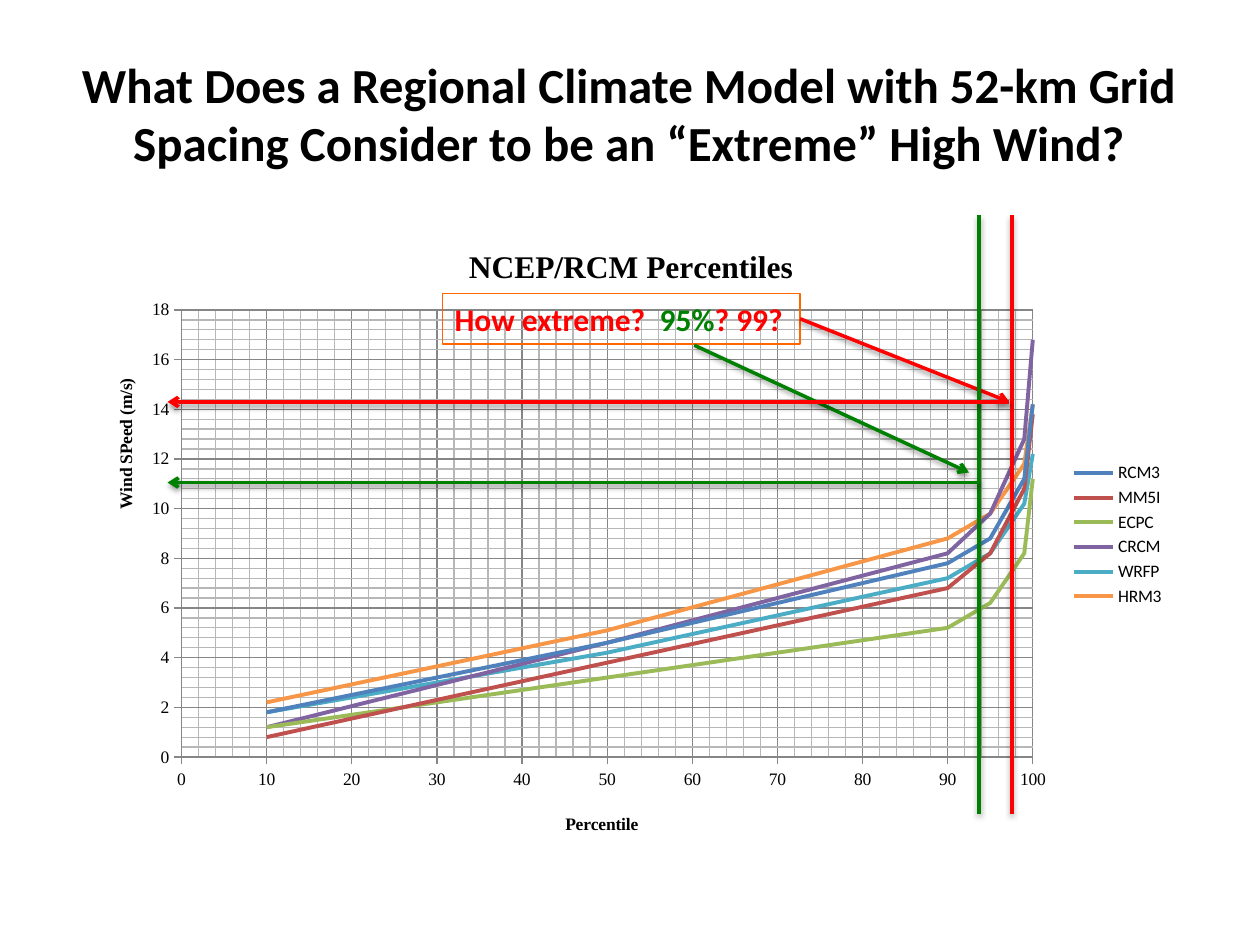
from typing import NamedTuple

from lxml import etree
from pptx import Presentation
from pptx.chart.data import XyChartData
from pptx.dml.color import RGBColor
from pptx.enum.chart import XL_CHART_TYPE, XL_LEGEND_POSITION, XL_TICK_MARK
from pptx.enum.shapes import MSO_CONNECTOR, MSO_SHAPE
from pptx.enum.text import MSO_ANCHOR, MSO_AUTO_SIZE, PP_ALIGN
from pptx.oxml import parse_xml
from pptx.oxml.ns import nsdecls, qn
from pptx.util import Inches, Pt

COLORS = {
    "black": "000000", "red": "FF0000", "green": "008000", "orange": "FF6600",
    "major": "868686", "minor": "B7B7B7",
}
SERIF, SANS = "Times New Roman", "Calibri"
PERCENTILES = (10, 50, 90, 95, 99, 100)


class Model(NamedTuple):
    name: str
    color: str
    speeds: tuple[float, ...]


class Marker(NamedTuple):
    start: tuple[float, float]
    end: tuple[float, float]
    color: str
    arrow: bool = True


class Scale(NamedTuple):
    title: str
    title_place: tuple[float, float]
    maximum: int
    major: int
    minor: float


MODELS = (
    Model("RCM3", "4F81BD", (1.8, 4.6, 7.8, 8.8, 11.2, 14.2)),
    Model("MM5I", "C0504D", (0.8, 3.8, 6.8, 8.2, 10.8, 13.8)),
    Model("ECPC", "9BBB59", (1.2, 3.2, 5.2, 6.2, 8.2, 11.2)),
    Model("CRCM", "8064A2", (1.2, 4.6, 8.2, 9.8, 12.8, 16.8)),
    Model("WRFP", "4BACC6", (1.8, 4.2, 7.2, 8.2, 10.2, 12.2)),
    Model("HRM3", "F79646", (2.2, 5.1, 8.8, 9.8, 11.8, 14.2)),
)
PERCENTILE_SCALE = Scale("Percentile", (0.44, 0.93), 100, 10, 2)
SPEED_SCALE = Scale("Wind SPeed (m/s)", (0.03, 0.25), 18, 2, 0.4)

RED_X, GREEN_X, AXIS_X = 8.03, 7.77, 1.33
TOP, BOTTOM = 1.71, 6.46
RED_SPEED_Y, GREEN_SPEED_Y = 3.19, 3.83
MARKERS = (
    Marker((6.35, 2.53), (8.01, RED_SPEED_Y), "red"),
    Marker((5.51, 2.74), (7.69, 3.75), "green"),
    Marker((RED_X, TOP), (RED_X, BOTTOM), "red", arrow=False),
    Marker((GREEN_X, TOP), (GREEN_X, BOTTOM), "green", arrow=False),
    Marker((GREEN_X, GREEN_SPEED_Y), (AXIS_X, GREEN_SPEED_Y), "green"),
    Marker((8.01, RED_SPEED_Y), (AXIS_X, RED_SPEED_Y), "red"),
)


def rgb(name: str) -> RGBColor:
    return RGBColor.from_string(COLORS.get(name, name))


def style_font(font, size: float, face: str, color: str = "black", bold: bool = False) -> None:
    for attribute, value in {"size": Pt(size), "name": face, "bold": bold}.items():
        setattr(font, attribute, value)
    font.color.rgb = rgb(color)


def style_line(line, color: str, width: float) -> None:
    line.color.rgb = rgb(color)
    line.width = Pt(width)


def place_part(part, after: str | None, **fractions: float) -> None:
    """Fix a chart part at fractions of the chart, its layout following the child named after."""
    for old in part.findall(qn("c:layout")):
        part.remove(old)
    layout = parse_xml(f'<c:layout {nsdecls("c")}><c:manualLayout/></c:layout>')
    settings = {"xMode": "edge", "yMode": "edge", **fractions}
    if after is None:
        settings = {"layoutTarget": "inner", **settings}
        part.insert(0, layout)
    else:
        part.find(qn(after)).addnext(layout)
    for tag, value in settings.items():
        etree.SubElement(layout[0], qn(f"c:{tag}")).set("val", str(value))


def write_title(title, text: str, size: float, place: tuple[float, float]) -> None:
    title.text_frame.text = text
    style_font(title.text_frame.paragraphs[0].runs[0].font, size, SERIF, bold=True)
    place_part(title._element, "c:tx", x=place[0], y=place[1])


def style_minor_gridlines(axis) -> None:
    axis._element.find(qn("c:minorGridlines")).append(parse_xml(
        f'<c:spPr {nsdecls("c", "a")}><a:ln w="{Pt(0.75)}"><a:solidFill>'
        f'<a:srgbClr val="{COLORS["minor"]}"/></a:solidFill></a:ln></c:spPr>'))


def format_axis(axis, scale: Scale) -> None:
    settings = {
        "minimum_scale": 0, "maximum_scale": scale.maximum,
        "major_unit": scale.major, "minor_unit": scale.minor,
        "has_major_gridlines": True, "has_minor_gridlines": True, "has_title": True,
        "major_tick_mark": XL_TICK_MARK.CROSS, "minor_tick_mark": XL_TICK_MARK.NONE,
    }
    for attribute, value in settings.items():
        setattr(axis, attribute, value)
    style_line(axis.major_gridlines.format.line, "major", 0.75)
    style_minor_gridlines(axis)
    style_line(axis.format.line, "major", 0.75)
    style_font(axis.tick_labels.font, 10, SERIF)
    axis.tick_labels.number_format = "General"
    axis.tick_labels.number_format_is_linked = False
    write_title(axis.axis_title, scale.title, 10, scale.title_place)


def add_wind_chart(slide) -> None:
    data = XyChartData()
    for model in MODELS:
        points = data.add_series(model.name)
        for percentile, speed in zip(PERCENTILES, model.speeds):
            points.add_data_point(percentile, speed)
    chart = slide.shapes.add_chart(
        XL_CHART_TYPE.XY_SCATTER_LINES_NO_MARKERS,
        Inches(0.62), Inches(1.71), Inches(8.73), Inches(5.07), data,
    ).chart
    style_font(chart.font, 10, SANS)
    chart.has_title = True
    write_title(chart.chart_title, "NCEP/RCM Percentiles", 18, (0.35, 0.04))
    format_axis(chart.category_axis, PERCENTILE_SCALE)
    format_axis(chart.value_axis, SPEED_SCALE)
    chart.has_legend = True
    chart.legend.position = XL_LEGEND_POSITION.RIGHT
    chart.legend.include_in_layout = False
    style_font(chart.legend.font, 10, SANS)
    place_part(chart.legend._element, "c:legendPos", x=0.9, y=0.38, w=0.09, h=0.24)

    plot = chart.plots[0]
    plot.vary_by_categories = False
    for series, model in zip(plot.series, MODELS):
        series.smooth = False
        style_line(series.format.line, model.color, 2.25)
    place_part(plot._element.getparent(), None, x=0.094, y=0.148, w=0.774, h=0.7)


def add_marker(slide, marker: Marker) -> None:
    connector = slide.shapes.add_connector(
        MSO_CONNECTOR.STRAIGHT, *(Inches(v) for v in marker.start + marker.end))
    style_line(connector.line, marker.color, 2)
    if marker.arrow:
        etree.SubElement(connector.line._get_or_add_ln(), qn("a:tailEnd")).set("type", "arrow")
    connector._element.spPr.append(parse_xml(
        f'<a:effectLst {nsdecls("a")}><a:outerShdw blurRad="{Pt(3.1)}" dist="{Pt(1.6)}" '
        f'dir="5400000" rotWithShape="0"><a:srgbClr val="{COLORS["black"]}">'
        '<a:alpha val="38000"/></a:srgbClr></a:outerShdw></a:effectLst>'))


def add_question(slide) -> None:
    question = slide.shapes.add_shape(
        MSO_SHAPE.RECTANGLE, Inches(3.51), Inches(2.33), Inches(2.84), Inches(0.4))
    question.shadow.inherit = False
    question.fill.background()
    style_line(question.line, "orange", 0.75)
    frame = question.text_frame
    frame.word_wrap = False
    frame.auto_size = MSO_AUTO_SIZE.SHAPE_TO_FIT_TEXT
    frame.vertical_anchor = MSO_ANCHOR.TOP
    frame.paragraphs[0].alignment = PP_ALIGN.LEFT
    for text, color in (("How extreme?  ", "red"), ("95%", "green"), ("? 99?", "red")):
        run = frame.paragraphs[0].add_run()
        run.text = text
        style_font(run.font, 18, SANS, color, bold=True)


def add_headline(slide) -> None:
    frame = slide.shapes.add_textbox(
        Inches(0.39), Inches(0.38), Inches(9.2), Inches(1.04)).text_frame
    frame.word_wrap = True
    frame.auto_size = MSO_AUTO_SIZE.SHAPE_TO_FIT_TEXT
    frame.text = ("What Does a Regional Climate Model with 52-km Grid Spacing "
                  "Consider to be an “Extreme” High Wind?")
    frame.paragraphs[0].alignment = PP_ALIGN.CENTER
    style_font(frame.paragraphs[0].runs[0].font, 28, SANS, bold=True)


def main() -> None:
    deck = Presentation()
    deck.slide_width, deck.slide_height = Inches(10), Inches(7.5)
    slide = deck.slides.add_slide(deck.slide_layouts[6])
    add_wind_chart(slide)
    add_question(slide)
    for marker in MARKERS:
        add_marker(slide, marker)
    add_headline(slide)
    deck.save("out.pptx")


if __name__ == "__main__":
    main()
